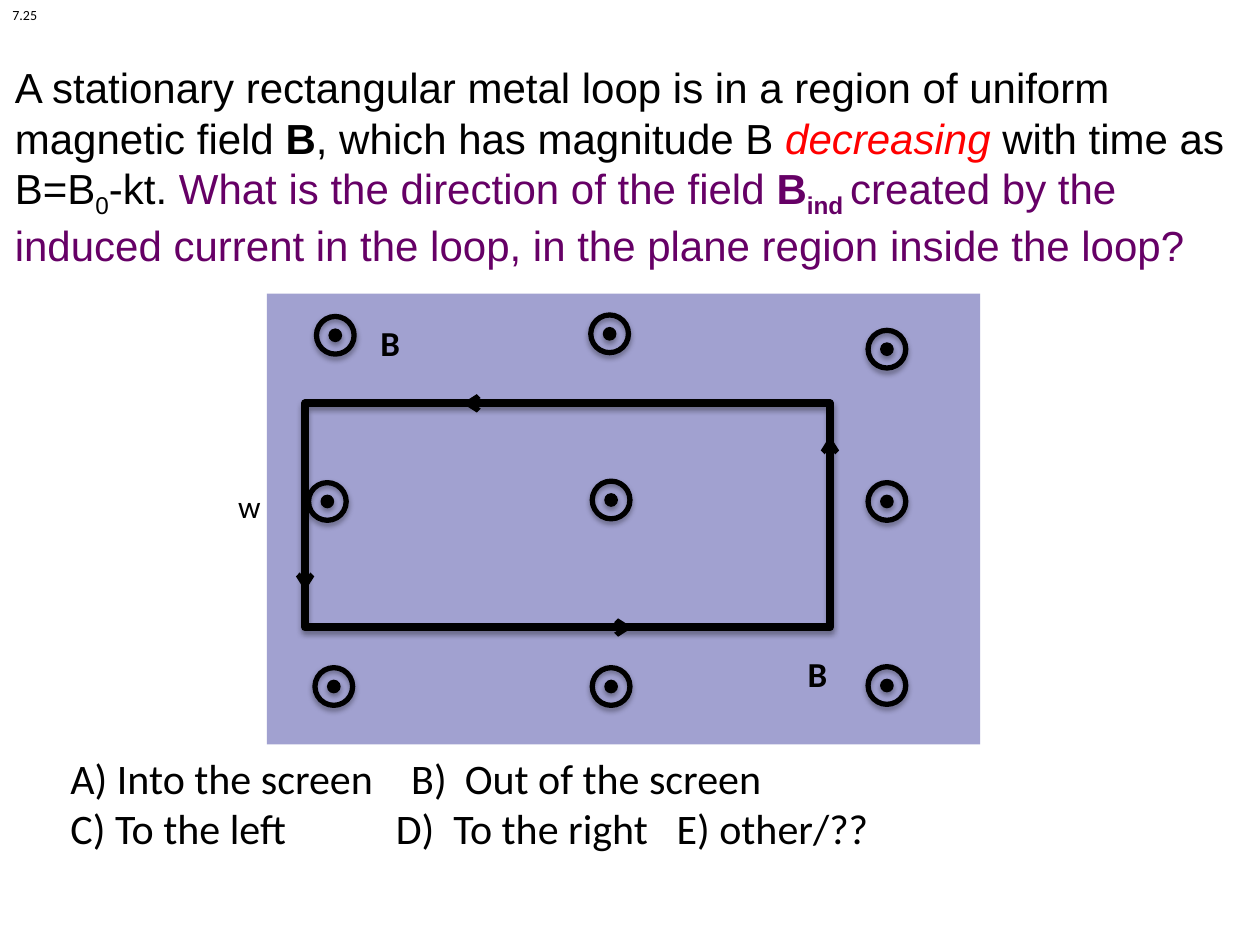
from lxml import etree
from pptx import Presentation
from pptx.dml.color import RGBColor
from pptx.enum.shapes import MSO_CONNECTOR, MSO_SHAPE
from pptx.enum.text import MSO_ANCHOR, MSO_AUTO_SIZE
from pptx.oxml.ns import qn
from pptx.util import Cm, Pt

RECTANGLE, OVAL = MSO_SHAPE.RECTANGLE, MSO_SHAPE.OVAL
STRAIGHT = MSO_CONNECTOR.STRAIGHT
MIDDLE, TOP = MSO_ANCHOR.MIDDLE, MSO_ANCHOR.TOP
GROW, FIXED = MSO_AUTO_SIZE.SHAPE_TO_FIT_TEXT, MSO_AUTO_SIZE.NONE

COLOURS = {"black": "000000", "red": "FF0000", "purple": "660066", "field": "333399"}
RING_SIZE, DOT_SIZE = 0.76, 0.25


def colour(name):
    return RGBColor.from_string(COLOURS[name])


def add_run(paragraph, text, size, font="Calibri", color="black",
            bold=False, italic=False, subscript=False):
    run = paragraph.add_run()
    run.text = text
    run.font.name, run.font.size = font, Pt(size)
    run.font.bold, run.font.italic = bold, italic
    run.font.color.rgb = colour(color)
    if subscript:
        run.font._element.set("baseline", "-25000")


def add_alpha(color_element, percent):
    etree.SubElement(color_element, qn("a:alpha"), val=str(percent * 1000))


def add_tab_stops(paragraph, positions):
    tab_list = etree.SubElement(paragraph._p.get_or_add_pPr(), qn("a:tabLst"))
    for position in positions:
        etree.SubElement(tab_list, qn("a:tab"), pos=str(int(Cm(position))), algn="l")


class SlideBuilder:
    """Holds the current slide and draws each kind of element, in centimetres."""

    def __init__(self, slide):
        self.slide = slide

    def text_box(self, left, top, width, height, wrap=True, anchor=TOP, auto_size=GROW):
        box = self.slide.shapes.add_textbox(Cm(left), Cm(top), Cm(width), Cm(height))
        frame = box.text_frame
        frame.word_wrap, frame.vertical_anchor, frame.auto_size = wrap, anchor, auto_size
        return frame

    def label(self, text, left, top, width, height, **run_format):
        frame = self.text_box(left, top, width, height, wrap=False)
        add_run(frame.paragraphs[0], text, **run_format)

    def shape(self, kind, left, top, width, height, fill=None, line_width=None,
              shadow=True, parent=None):
        shapes = (parent or self.slide).shapes
        shape = shapes.add_shape(kind, Cm(left), Cm(top), Cm(width), Cm(height))
        if fill:
            shape.fill.solid()
            shape.fill.fore_color.rgb = colour(fill)
        else:
            shape.fill.background()
        if line_width:
            shape.line.color.rgb = colour("black")
            shape.line.width = Pt(line_width)
        else:
            shape.line.fill.background()
        shape.shadow.inherit = False
        if shadow:
            self.soft_shadow(shape)
        return shape

    def soft_shadow(self, shape):
        effects = shape._element.spPr.find(qn("a:effectLst"))
        outer = etree.SubElement(effects, qn("a:outerShdw"), blurRad=str(int(Pt(3.1))),
                                 dist=str(int(Pt(1.8))), dir="5400000", rotWithShape="0")
        add_alpha(etree.SubElement(outer, qn("a:srgbClr"), val=COLOURS["black"]), 35)

    def field_out(self, x, y):
        """Circled dot: a field vector pointing out of the screen."""
        group = self.slide.shapes.add_group_shape()
        for size, fill, line_width in ((RING_SIZE, None, 3), (DOT_SIZE, "black", 0.75)):
            self.shape(OVAL, x - size / 2, y - size / 2, size, size,
                       fill=fill, line_width=line_width, parent=group)

    def arrow(self, start_x, start_y, end_x, end_y):
        connector = self.slide.shapes.add_connector(
            STRAIGHT, Cm(start_x), Cm(start_y), Cm(end_x), Cm(end_y))
        connector.line.color.rgb = colour("black")
        connector.line.width = Pt(3)
        etree.SubElement(connector.line._get_or_add_ln(), qn("a:tailEnd"), type="arrow")
        etree.SubElement(connector._element.spPr, qn("a:effectLst"))


def add_question(builder):
    frame = builder.text_box(0.05, 0.74, 25.4, 5.21, anchor=MIDDLE, auto_size=FIXED)
    purple = {"color": "purple"}
    for text, run_format in (
        ("A stationary rectangular metal loop is in a region of uniform magnetic field ", {}),
        ("B", {"bold": True}),
        (", which has magnitude B ", {}),
        ("decreasing ", {"color": "red", "italic": True}),
        ("with time as B=B", {}),
        ("0", {"subscript": True}),
        ("-kt. ", {}),
        ("What is the direction of the field ", purple),
        ("B", {"bold": True, **purple}),
        ("ind ", {"bold": True, "subscript": True, **purple}),
        ("created by the induced current in the loop, "
         "in the plane region inside the loop?", purple),
    ):
        add_run(frame.paragraphs[0], text, 24, font="Arial", **run_format)


def add_answers(builder):
    frame = builder.text_box(1.17, 15.04, 23.09, 2.31)
    answers = (
        ("A) Into the screen\tB)\tOut of the screen", (6.87, 7.95)),
        ("C) To the left\tD)\tTo the right\tE) other/??", (6.56, 7.72, 12.22)),
    )
    for index, (text, tab_stops) in enumerate(answers):
        paragraph = frame.add_paragraph() if index else frame.paragraphs[0]
        add_tab_stops(paragraph, tab_stops)
        add_run(paragraph, text, 24)


def add_field(builder):
    region = builder.shape(RECTANGLE, 5.38, 5.92, 14.38, 9.09, fill="field", shadow=False)
    add_alpha(region._element.spPr.find(qn("a:solidFill"))[0], 46)
    for centre in (
        (6.76, 6.76), (12.29, 6.73), (17.88, 7.04),
        (6.6, 10.11), (12.32, 10.08), (17.88, 10.11),
        (6.73, 13.84), (12.32, 13.84), (17.88, 13.82),
    ):
        builder.field_out(*centre)
    for left, top in ((7.42, 6.35), (16.03, 13.03)):
        builder.label("B", left, top, 1.02, 1.12, size=20, bold=True)


def add_loop(builder):
    left, top, right, bottom = 6.15, 8.13, 16.73, 12.65
    length = 2.87
    builder.shape(RECTANGLE, left, top, right - left, bottom - top, line_width=4.5)
    builder.label("w", 4.55, 9.7, 1.04, 1.02, size=18)
    for x, y, step_x, step_y in (
        (12.19, top, -1, 0), (9.88, bottom, 1, 0),
        (left, 9.04, 0, 1), (right, 11.66, 0, -1),
    ):
        builder.arrow(x, y, x + step_x * length, y + step_y * length)


def main():
    presentation = Presentation()
    presentation.slide_width, presentation.slide_height = Cm(25.4), Cm(19.05)
    builder = SlideBuilder(presentation.slides.add_slide(presentation.slide_layouts[6]))
    add_question(builder)
    add_answers(builder)
    add_field(builder)
    add_loop(builder)
    builder.label("7.25", 0, 0, 1.02, 0.61, size=8)
    presentation.save("out.pptx")


if __name__ == "__main__":
    main()
